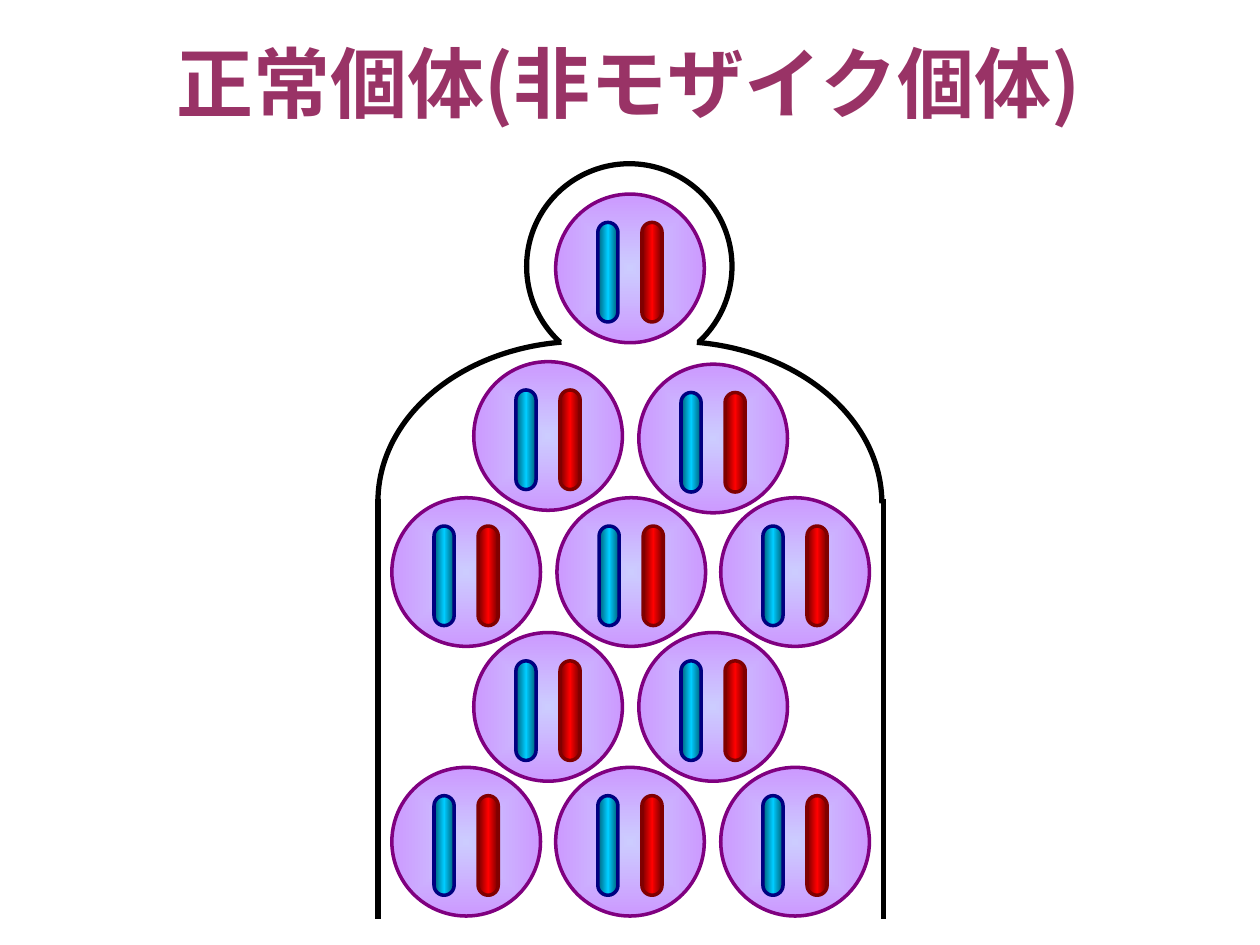
from lxml import etree
from pptx import Presentation
from pptx.dml.color import RGBColor as RGB
from pptx.enum.shapes import MSO_CONNECTOR as Conn, MSO_SHAPE as Geom
from pptx.enum.text import MSO_ANCHOR as Anchor, PP_ALIGN as Align
from pptx.oxml import parse_xml
from pptx.oxml.ns import nsdecls, qn
from pptx.util import Inches, Pt

FONT = "Noto Sans CJK JP"
PLUM = RGB(0x99, 0x33, 0x66)
BLACK = RGB(0, 0, 0)
PURPLE = RGB(0x80, 0, 0x80)
LILAC = RGB(0xCC, 0xCC, 0xFF)
MAUVE = RGB(0xCC, 0x99, 0xFF)
MAROON = RGB(0x80, 0, 0)
WINE = RGB(0x76, 0, 0)
RED = RGB(0xFF, 0, 0)
NAVY = RGB(0, 0, 0x80)
TEAL = RGB(0, 0x5E, 0x76)
CYAN = RGB(0, 0xCC, 0xFF)

RADIAL = ('<a:path path="shape"><a:fillToRect l="50000" t="50000" '
          'r="50000" b="50000"/></a:path>')
LINEAR = '<a:lin ang="5400000" scaled="1"/>'

# Left and top of each cell, row by row
CELLS = [(4.41, 1.54),
         (3.76, 2.87), (5.07, 2.89),
         (3.11, 3.95), (5.72, 3.95), (4.42, 3.95),
         (3.76, 5.02), (5.07, 5.02),
         (3.11, 6.09), (5.72, 6.09), (4.41, 6.09)]
SIZE = 1.18


def add_text(slide, text, box, size, color, bold=False, align=Align.CENTER):
    frame = slide.shapes.add_textbox(*map(Inches, box)).text_frame
    frame.word_wrap = True
    frame.vertical_anchor = Anchor.MIDDLE
    para = frame.paragraphs[0]
    para.alignment = align
    run = para.add_run()
    run.text = text
    font = run.font
    font.name, font.size, font.bold = FONT, Pt(size), bold
    font.color.rgb = color
    # East Asian glyphs take their own typeface
    etree.SubElement(run.font._element, qn("a:ea")).set("typeface", FONT)


def add_shape(group, geom, box, line, width):
    shape = group.shapes.add_shape(geom, *map(Inches, box))
    shape.shadow.inherit = False
    shape.fill.background()
    shape.line.color.rgb = line
    shape.line.width = Pt(width)
    return shape


def shade(shape, colors, kind):
    """Fill with evenly spaced colour stops."""
    step = 100000 // (len(colors) - 1)
    stops = "".join(f'<a:gs pos="{i * step}"><a:srgbClr val="{color}"/></a:gs>'
                    for i, color in enumerate(colors))
    grad = parse_xml(f'<a:gradFill {nsdecls("a")} rotWithShape="1">'
                     f'<a:gsLst>{stops}</a:gsLst>{kind}</a:gradFill>')
    props = shape.element.spPr
    props.replace(props.find(qn("a:noFill")), grad)


def add_arc(group, box, start, end, flip=False):
    arc = add_shape(group, Geom.ARC, box, BLACK, 3)
    arc.adjustments[0], arc.adjustments[1] = start, end
    if flip:
        arc.element.spPr.find(qn("a:xfrm")).set("flipH", "1")


def add_side(group, x):
    line = group.shapes.add_connector(
        Conn.STRAIGHT, Inches(x), Inches(3.96), Inches(x), Inches(7.29))
    line.line.color.rgb = BLACK
    line.line.width = Pt(3)
    etree.SubElement(line.element.spPr, qn("a:effectLst"))


def add_bar(group, x, y, edge, dark, light):
    bar = add_shape(group, Geom.ROUNDED_RECTANGLE, (x, y, 0.79, 0.16), edge, 2)
    bar.adjustments[0] = 0.5
    bar.rotation = 270
    shade(bar, [dark, light, dark], LINEAR)


def add_cell(group, x, y):
    cell = add_shape(group, Geom.OVAL, (x, y, SIZE, SIZE), PURPLE, 2)
    shade(cell, [LILAC, MAUVE], RADIAL)
    add_bar(group, x + 0.37, y + 0.54, MAROON, WINE, RED)
    add_bar(group, x + 0.02, y + 0.54, NAVY, TEAL, CYAN)


def main():
    deck = Presentation()
    deck.slide_width, deck.slide_height = Inches(10), Inches(7.5)
    slide = deck.slides.add_slide(deck.slide_layouts[6])

    # Title
    add_text(slide, "正常個体(非モザイク個体)", (0.06, 0.1, 9.86, 1.1),
             size=44, color=PLUM, bold=True)

    # Body outline: head, shoulders and sides
    body = slide.shapes.add_group_shape()
    add_arc(body, (4.18, 1.3, 1.63, 1.63), 79.39, 28.54)
    add_arc(body, (3.7, 2.71, 3.3, 2.57), 166.85, 0)
    add_side(body, 7.01)
    add_arc(body, (3, 2.71, 3.24, 2.54), 166.44, 0, flip=True)
    add_side(body, 3)

    # Cells, each with a pair of chromosomes
    for x, y in CELLS:
        add_cell(body, x, y)

    deck.save("out.pptx")


if __name__ == "__main__":
    main()
